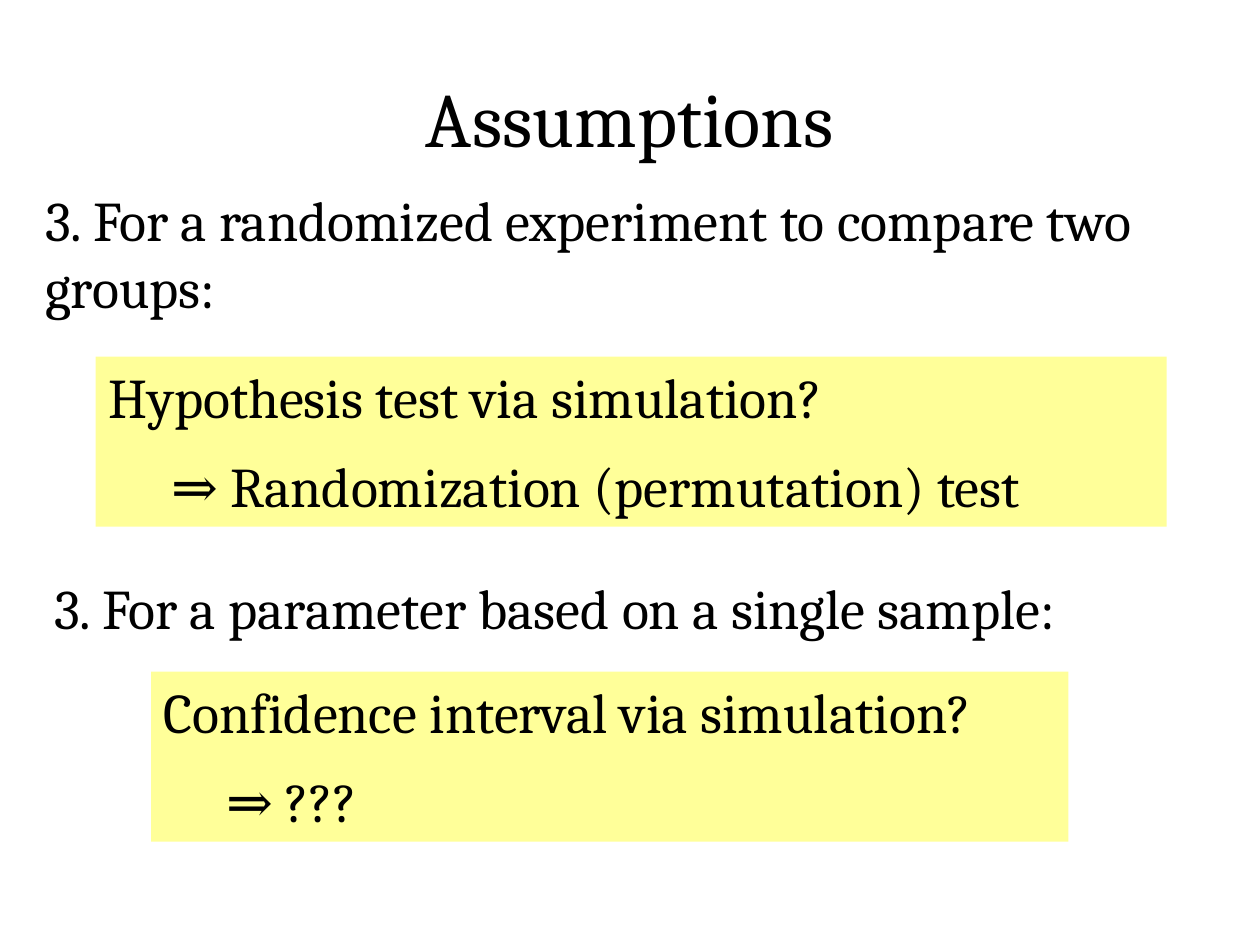
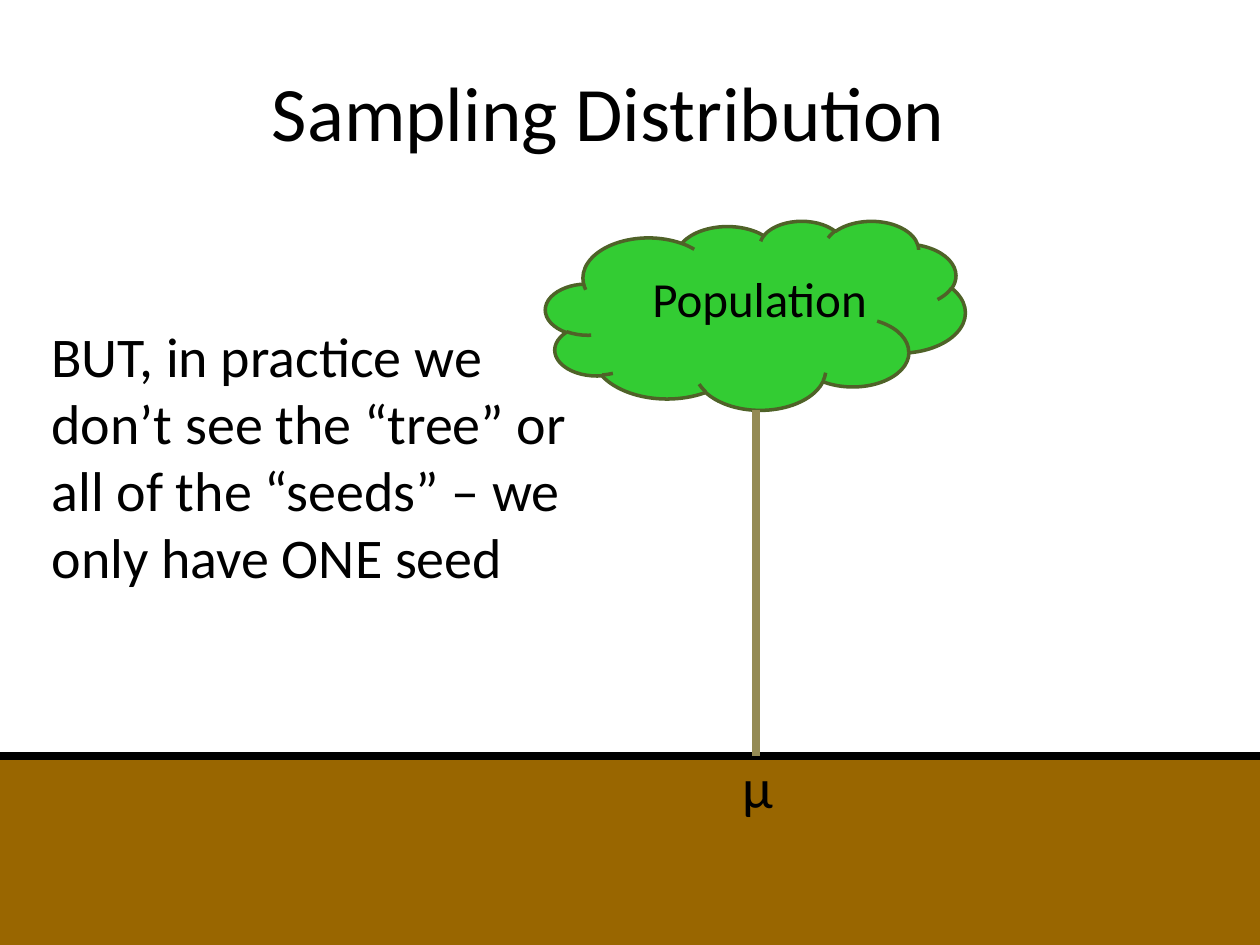
from pptx import Presentation, util as u
from pptx.dml.color import RGBColor
from pptx.enum import shapes as es, text as et
from pptx.oxml.ns import qn
from lxml import etree

WIDE, HIGH = 25.4, 19.05
GROUND = 15.24
TRUNK = 15.24


def color(code):
    return RGBColor.from_string(code)


class Deck:
    ink = "000000"
    note = "FFFF99"
    body = 32

    def __init__(self):
        self.prs = Presentation()
        self.prs.slide_width = u.Cm(WIDE)
        self.prs.slide_height = u.Cm(HIGH)

    def start(self, title, font, left, top):
        self.font = font
        self.slide = self.prs.slides.add_slide(self.prs.slide_layouts[5])
        head = self.slide.shapes.title
        self.place(head, left, top, 22.86, 3.18)
        self.label(head, [title], 44, et.PP_ALIGN.CENTER)
        head.text_frame.vertical_anchor = et.MSO_ANCHOR.MIDDLE

    def place(self, item, left, top, wide, high):
        item.left, item.top = u.Cm(left), u.Cm(top)
        item.width, item.height = u.Cm(wide), u.Cm(high)

    def label(self, item, lines, size, align=et.PP_ALIGN.LEFT, after=0):
        frame = item.text_frame
        frame.word_wrap = True
        frame.text = "\n".join(lines)
        for para in frame.paragraphs:
            para.alignment = align
            para.space_after = u.Pt(after)
            for run in para.runs:
                run.font.name = self.font
                run.font.size = u.Pt(size)
                run.font.color.rgb = color(self.ink)

    def text(self, words, left, top, wide, high, size=body):
        box = self.slide.shapes.add_textbox(*map(u.Cm, (left, top, wide, high)))
        self.label(box, [words], size)

    def shape(self, kind, fill, left, top, wide, high, edge=None):
        item = self.slide.shapes.add_shape(kind, *map(u.Cm, (left, top, wide, high)))
        item.shadow.inherit = False
        item.fill.solid()
        item.fill.fore_color.rgb = color(fill)
        if edge:
            item.line.color.rgb = color(edge)
            item.line.width = u.Pt(2)
        else:
            item.line.fill.background()
        return item

    def panel(self, ask, reply, left, top, wide):
        item = self.shape(es.MSO_SHAPE.RECTANGLE, self.note, left, top, wide, 3.43)
        self.label(item, [ask, "⇒ " + reply], self.body, after=12)
        item.text_frame.vertical_anchor = et.MSO_ANCHOR.TOP
        item.text_frame.paragraphs[1]._p.get_or_add_pPr().set("marL", str(u.Cm(1.27)))

    def line(self, tint, *ends):
        item = self.slide.shapes.add_connector(es.MSO_CONNECTOR.STRAIGHT, *map(u.Cm, ends))
        item.line.color.rgb = color(tint)
        item.line.width = u.Pt(4.5)
        etree.SubElement(item._element.spPr, qn("a:effectLst"))


def main():
    deck = Deck()

    deck.start("Assumptions", "Cambria", 1.27, 0.76)
    deck.text("3. For a randomized experiment to compare two groups:", 0.66, 3.61, 22.86, 3)
    deck.panel("Confidence interval via simulation?", "???", 3.05, 13.54, 18.49)
    deck.panel("Hypothesis test via simulation?", "Randomization (permutation) test", 1.93, 7.19, 21.59)
    deck.text("3. For a parameter based on a single sample:", 0.84, 11.43, 22.86, 3)

    deck.start("Sampling Distribution", "Calibri", 0.84, 0.64)
    deck.shape(es.MSO_SHAPE.RECTANGLE, "996600", 0, GROUND, WIDE, HIGH - GROUND)
    deck.line(deck.ink, 0, GROUND, WIDE, GROUND)
    deck.shape(es.MSO_SHAPE.CLOUD, "33CC33", 11, 4.45, 8.46, 3.81, "4F6228")
    deck.text("Population", 12.9, 5.28, 5.08, 1.45, 28)
    deck.line("948A54", TRUNK, 8.26, TRUNK, GROUND)
    deck.text("µ", 14.71, 15.04, 1.47, 1.63)
    deck.text("BUT, in practice we don’t see the “tree” or all of the “seeds” – we only have ONE seed",
              0.79, 6.35, 11.23, 5.74)

    deck.prs.save("out.pptx")


if __name__ == "__main__":
    main()
